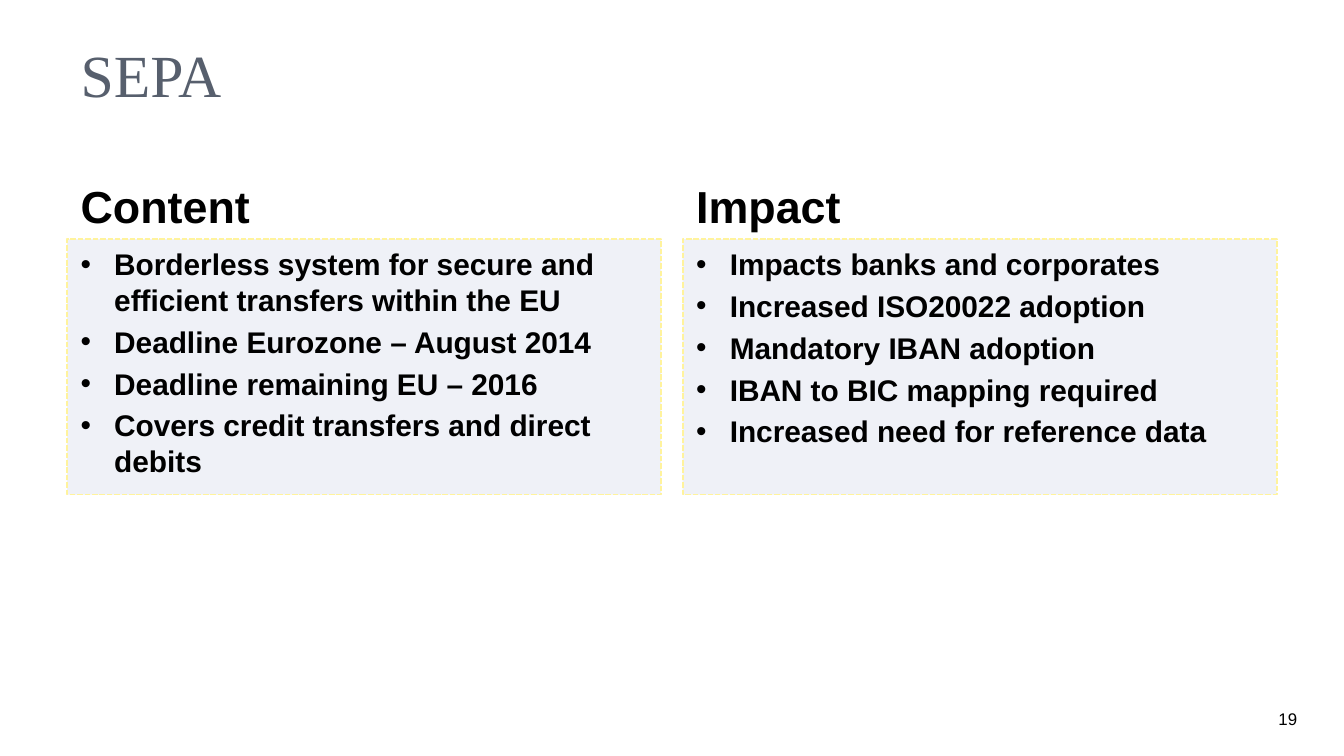
import pptx
import pptx.dml.color
import pptx.enum.dml
import pptx.enum.text
import pptx.oxml
import pptx.util

COLORS = {"title": "575F6D", "text": "000000", "panel": "EFF1F7", "border": "FFF39D"}
ALIGN = pptx.enum.text.PP_ALIGN
ANCHOR = pptx.enum.text.MSO_ANCHOR
Inches, Pt = pptx.util.Inches, pptx.util.Pt

TITLE_FONT = {"name": "Times New Roman", "size": Pt(32), "bold": False}
HEADING_FONT = {"name": "Arial", "size": Pt(24), "bold": True}
LIST_FONT = {"name": "Arial", "size": Pt(16), "bold": True}
NUMBER_FONT = {"name": "Arial", "size": Pt(9), "bold": False}

SLIDE_WIDTH = 10
SLIDE_HEIGHT = SLIDE_WIDTH * 9 / 16
MARGIN, COLUMN_WIDTH, COLUMN_GAP = 0.5, 4.42, 0.16
COLUMN_TOP, HEADING_HEIGHT, LIST_HEIGHT = 1.26, 0.52, 1.9
COLUMNS = [
    ("Content", [
        "Borderless system for secure and efficient transfers within the EU",
        "Deadline Eurozone – August 2014",
        "Deadline remaining EU – 2016",
        "Covers credit transfers and direct debits",
    ]),
    ("Impact", [
        "Impacts banks and corporates",
        "Increased ISO20022 adoption",
        "Mandatory IBAN adoption",
        "IBAN to BIC mapping required",
        "Increased need for reference data",
    ]),
]


def rgb(name):
    return pptx.dml.color.RGBColor.from_string(COLORS[name])


def place(shape, left, top, width, height):
    box = {"left": left, "top": top, "width": width, "height": height}
    for side, length in box.items():
        setattr(shape, side, Inches(length))


def add_bullet(paragraph):
    properties = paragraph._p.get_or_add_pPr()
    properties.set("marL", str(Inches(0.25)))
    properties.set("indent", str(Inches(-0.25)))
    properties.append(pptx.oxml.parse_xml(
        '<a:buChar xmlns:a="http://schemas.openxmlformats.org/'
        'drawingml/2006/main" char="•"/>'))


def write(shape, lines, font, color="text", anchor=ANCHOR.TOP,
          align=ALIGN.LEFT, gap=0, bullet=False):
    """Fill a shape with one paragraph per line; gap is the points between them."""
    frame = shape.text_frame
    frame.text = "\n".join(lines)
    frame.word_wrap = True
    frame.auto_size = pptx.enum.text.MSO_AUTO_SIZE.NONE
    frame.vertical_anchor = anchor
    for index, paragraph in enumerate(frame.paragraphs):
        paragraph.alignment = align
        paragraph.space_before = Pt(gap if index else 0)
        if bullet:
            add_bullet(paragraph)
        for run in paragraph.runs:
            for attribute, value in font.items():
                setattr(run.font, attribute, value)
            run.font.color.rgb = rgb(color)


def add_title(title, left, top, width, height):
    place(title, left, top, width, height)
    write(title, ["SEPA"], TITLE_FONT, color="title")


def add_column(heading, panel, heading_text, points, left, top, width):
    place(heading, left, top, width, HEADING_HEIGHT)
    write(heading, [heading_text], HEADING_FONT, anchor=ANCHOR.BOTTOM)

    place(panel, left, top + HEADING_HEIGHT, width, LIST_HEIGHT)
    panel.fill.solid()
    panel.fill.fore_color.rgb = rgb("panel")
    panel.line.color.rgb = rgb("border")
    panel.line.width = Pt(1)
    panel.line.dash_style = pptx.enum.dml.MSO_LINE.SQUARE_DOT
    write(panel, points, LIST_FONT, gap=3.2, bullet=True)


def add_page_number(slide, left, top, width, height):
    box = [Inches(length) for length in (left, top, width, height)]
    number = slide.shapes.add_textbox(*box)
    write(number, ["19"], NUMBER_FONT, anchor=ANCHOR.MIDDLE, align=ALIGN.RIGHT)


def main():
    presentation = pptx.Presentation()
    presentation.slide_width = Inches(SLIDE_WIDTH)
    presentation.slide_height = Inches(SLIDE_HEIGHT)
    comparison = presentation.slide_layouts.get_by_name("Comparison")
    slide = presentation.slides.add_slide(comparison)

    title, *parts = slide.placeholders
    add_title(title, MARGIN, 0.23, 9, 0.94)
    for index, (heading_text, points) in enumerate(COLUMNS):
        heading, panel = parts[2 * index:2 * index + 2]
        left = MARGIN + index * (COLUMN_WIDTH + COLUMN_GAP)
        add_column(heading, panel, heading_text, points,
                   left, COLUMN_TOP, COLUMN_WIDTH)
    add_page_number(slide, 8.92, 5.25, 0.83, 0.19)
    presentation.save("out.pptx")


if __name__ == "__main__":
    main()
